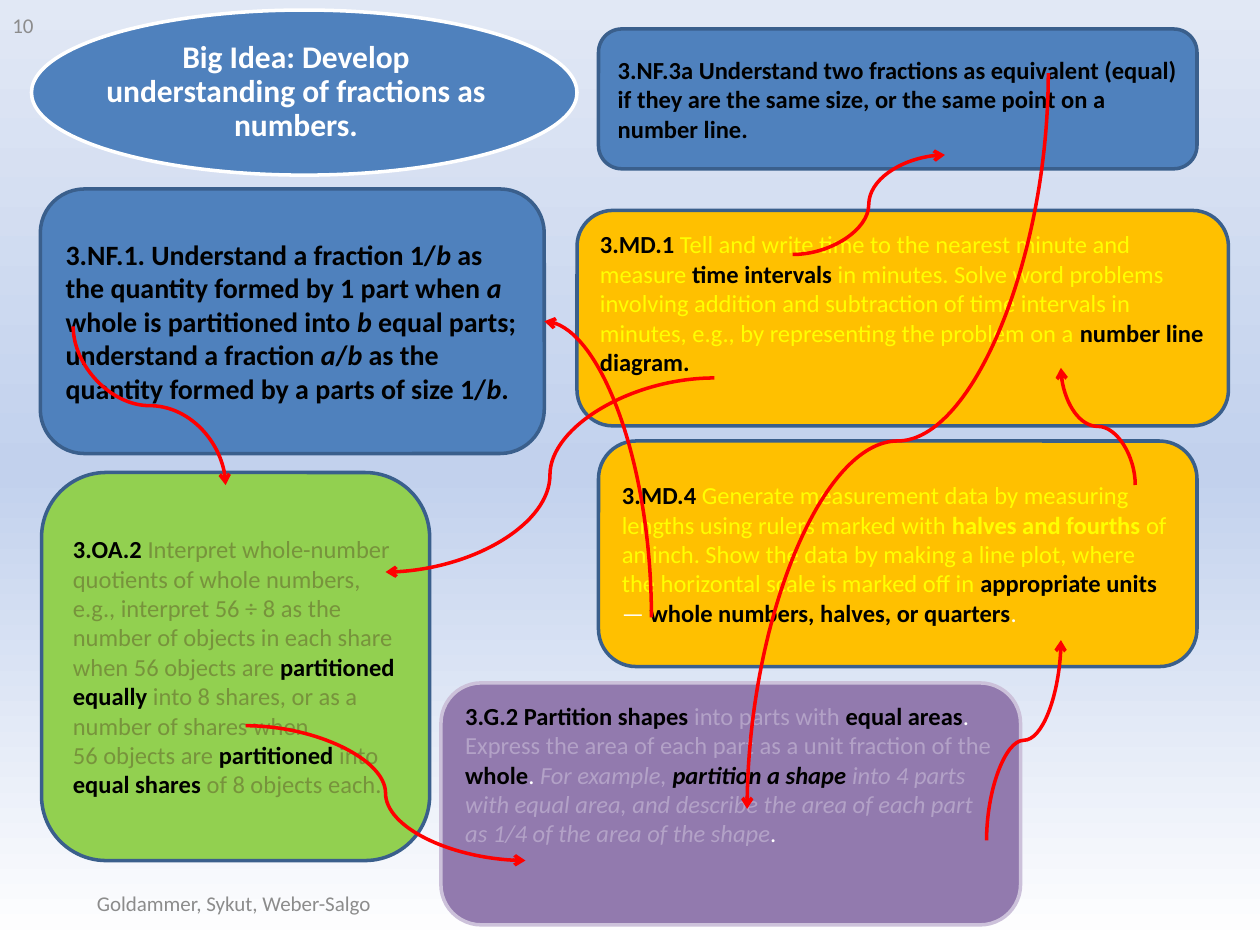
from copy import deepcopy
from typing import NamedTuple

from lxml import etree
from pptx import Presentation
from pptx import util as u
from pptx.dml.color import RGBColor
from pptx.enum import shapes, text
from pptx.oxml.ns import qn

BLACK, WHITE, GREY, RED = "000000", "FFFFFF", "8C8C8C", "FF0000"
BLUE, GOLD, GREEN, PURPLE = "4F81BD", "FFC000", "92D050", "927AAE"
EDGE, LILAC_EDGE = "3A5F8C", "CCC1DA"
YELLOW, OLIVE, LILAC = "FFFF00", "77933C", "B3A2C7"
MIDDLE, LEFT, CENTER = text.MSO_ANCHOR.MIDDLE, text.PP_ALIGN.LEFT, text.PP_ALIGN.CENTER


class Run(NamedTuple):
    words: str
    color: str = BLACK
    bold: bool = True
    italic: bool = False


class Standard(NamedTuple):
    box: tuple[float, float, float, float]
    fill: str
    paragraphs: list[list[Run]]
    size: int = 14
    edge: str = EDGE
    bottom_inset: float = 0.05


class Link(NamedTuple):
    start: tuple[float, float]
    end: tuple[float, float]
    leaves_vertically: bool = False
    preset: str = "curvedConnector3"


def plain(words: str, color: str, italic: bool = False) -> Run:
    return Run(words, color, False, italic)


def with_variables(marked: str) -> list[Run]:
    """Bold runs in which the parts between asterisks are italic."""
    return [Run(part, italic=i % 2 == 1) for i, part in enumerate(marked.split("*"))]


STANDARDS = [
    Standard((0.32, 1.5, 4, 2.1), BLUE, [with_variables(
        "3.NF.1. Understand a fraction 1/*b* as the quantity formed by 1 part when *a* whole is "
        "partitioned into *b* equal parts; understand a fraction *a*/*b* as the quantity formed "
        "by a parts of size 1/*b*.")], size=16),
    Standard((3.5, 5.42, 4.6, 1.92), PURPLE, [[
        Run("3.G.2 Partition shapes "), plain("into parts with ", LILAC),
        Run("equal areas"), plain(". ", WHITE),
        plain("Express the area of each part as a unit fraction of the ", LILAC),
        Run("whole"), plain(". ", WHITE), plain("For example, ", LILAC, True),
        Run("partition a shape ", italic=True),
        plain("into 4 parts with equal area, and describe the area of each part as 1/4 of the "
              "area of the shape", LILAC, True),
        plain(".", WHITE, True)]], edge=LILAC_EDGE, bottom_inset=0.52),
    Standard((4.75, 3.5, 4.75, 1.79), GOLD, [[
        Run("3.MD.4 "),
        plain("Generate measurement data by measuring lengths using rulers marked with ", YELLOW),
        Run("halves and fourths ", YELLOW),
        plain("of an inch. Show the data by making a line plot, where the horizontal scale is "
              "marked off in ", YELLOW),
        Run("appropriate units"), plain("— ", WHITE),
        Run("whole numbers, halves, or quarters"), plain(".", WHITE)]]),
    Standard((4.58, 1.67, 5.17, 1.71), GOLD, [[
        Run("3.MD.1 "),
        plain("Tell and write time to the nearest minute and measure ", YELLOW),
        Run("time intervals "),
        plain("in minutes. Solve word problems involving addition and subtraction of time "
              "intervals in minutes, e.g., by representing the problem on a ", YELLOW),
        Run("number line diagram.")]], bottom_inset=0.29),
    Standard((0.33, 3.75, 3.08, 3.08), GREEN, [
        [Run("3.OA.2 "),
         plain("Interpret whole-number quotients of whole numbers, e.g., interpret 56 ÷ 8 as the "
               "number of objects in each share when 56 objects are ", OLIVE),
         Run("partitioned equally "),
         plain("into 8 shares, or as a number of shares when", OLIVE)],
        [plain("56 objects are ", OLIVE), Run("partitioned "), plain("into ", OLIVE),
         Run("equal shares "), plain("of 8 objects each.", OLIVE)]]),
    Standard((4.75, 0.23, 4.75, 1.11), BLUE, [[
        Run("3.NF.3a Understand two fractions as equivalent (equal) if they are the same size, "
            "or the same point on a number line.")]]),
]

LINKS = [
    Link((0.58, 2.59), (1.79, 3.85), True),
    Link((1.95, 5.76), (4.17, 6.83)),
    Link((7.83, 6.67), (8.42, 5.08), True),
    Link((9.01, 3.85), (8.42, 2.92), True),
    Link((6.29, 2.02), (7.5, 1.23)),
    Link((5.67, 3), (3.06, 4.54)),
    Link((5.17, 4.9), (4.32, 2.55), True, "curvedConnector2"),
    Link((8.32, 0.58), (5.93, 6.42), True),
]


def rgb(color: str) -> RGBColor:
    return RGBColor.from_string(color)


def paint_background(slide) -> None:
    fill = slide.background.fill
    fill.gradient()
    fill.gradient_angle = 90
    stop_list = slide.element.find(".//" + qn("a:gsLst"))
    stop_list.append(deepcopy(stop_list[-1]))
    stops = [(0, "FFFFFF"), (0.5, "C2D1ED"), (1, "E1E8F5")]
    for stop, (position, color) in zip(fill.gradient_stops, stops):
        stop.position = position
        stop.color.rgb = rgb(color)


def write(frame, paragraphs: list[list[Run]], size: int, align=LEFT) -> None:
    frame.word_wrap = True
    frame.vertical_anchor = MIDDLE
    for i, runs in enumerate(paragraphs):
        paragraph = frame.add_paragraph() if i else frame.paragraphs[0]
        paragraph.alignment = align
        for part in runs:
            run = paragraph.add_run()
            run.text = part.words
            font = run.font
            font.name, font.size = "Calibri", u.Pt(size)
            font.bold, font.italic = part.bold, part.italic
            font.color.rgb = rgb(part.color)


def add_panel(slide, preset, box, fill: str, edge: str):
    panel = slide.shapes.add_shape(preset, *map(u.Inches, box))
    panel.shadow.inherit = False
    panel.fill.solid()
    panel.fill.fore_color.rgb = rgb(fill)
    panel.line.color.rgb = rgb(edge)
    panel.line.width = u.Pt(2)
    return panel


def add_label(slide, box, run: Run, size: int, align=LEFT):
    frame = slide.shapes.add_textbox(*map(u.Inches, box)).text_frame
    write(frame, [[run]], size, align)
    return frame


def add_standard(slide, standard: Standard) -> None:
    panel = add_panel(slide, shapes.MSO_SHAPE.ROUNDED_RECTANGLE, standard.box,
                      standard.fill, standard.edge)
    panel.text_frame.margin_bottom = u.Inches(standard.bottom_inset)
    write(panel.text_frame, standard.paragraphs, standard.size)


def add_link(slide, link: Link) -> None:
    """Draw a curved arrow; one leaving vertically is laid flat, then turned by 270 degrees."""
    (x1, y1), (x2, y2) = link.start, link.end
    if link.leaves_vertically:
        center_x, center_y = (x1 + x2) / 2, (y1 + y2) / 2
        half_x, half_y = (y1 - y2) / 2, (x2 - x1) / 2
        x1, y1 = center_x - half_x, center_y - half_y
        x2, y2 = center_x + half_x, center_y + half_y
    arrow = slide.shapes.add_connector(shapes.MSO_CONNECTOR.CURVE,
                                       *map(u.Inches, (x1, y1, x2, y2)))
    arrow.line.color.rgb = rgb(RED)
    arrow.line.width = u.Pt(2)
    properties = arrow.element.spPr
    if link.leaves_vertically:
        properties.find(qn("a:xfrm")).set("rot", str(270 * 60000))
    properties.find(qn("a:prstGeom")).set("prst", link.preset)
    etree.SubElement(properties.find(qn("a:ln")), qn("a:tailEnd")).set("type", "arrow")
    etree.SubElement(properties, qn("a:effectLst"))


def main() -> None:
    deck = Presentation()
    deck.slide_width, deck.slide_height = u.Inches(10), u.Inches(7.5)
    slide = deck.slides.add_slide(deck.slide_layouts[6])
    paint_background(slide)

    add_panel(slide, shapes.MSO_SHAPE.OVAL, (0.25, 0.08, 4.33, 1.31), BLUE, WHITE)
    big_idea = add_label(slide, (0.75, 0.23, 3.2, 1), Run(
        "Big Idea: Develop understanding of fractions as numbers.", WHITE), 18, CENTER)
    big_idea.paragraphs[0].line_spacing = 0.9
    big_idea.margin_left = big_idea.margin_right = u.Inches(0.03)
    big_idea.margin_top = big_idea.margin_bottom = u.Inches(0.03)

    for standard in STANDARDS:
        add_standard(slide, standard)
    for link in LINKS:
        add_link(slide, link)

    add_label(slide, (0, 0, 2.33, 0.4), plain("10", GREY), 12)
    add_label(slide, (0.67, 6.97, 3.17, 0.4), plain("Goldammer, Sykut, Weber-Salgo", GREY), 12)
    deck.save("out.pptx")


if __name__ == "__main__":
    main()
